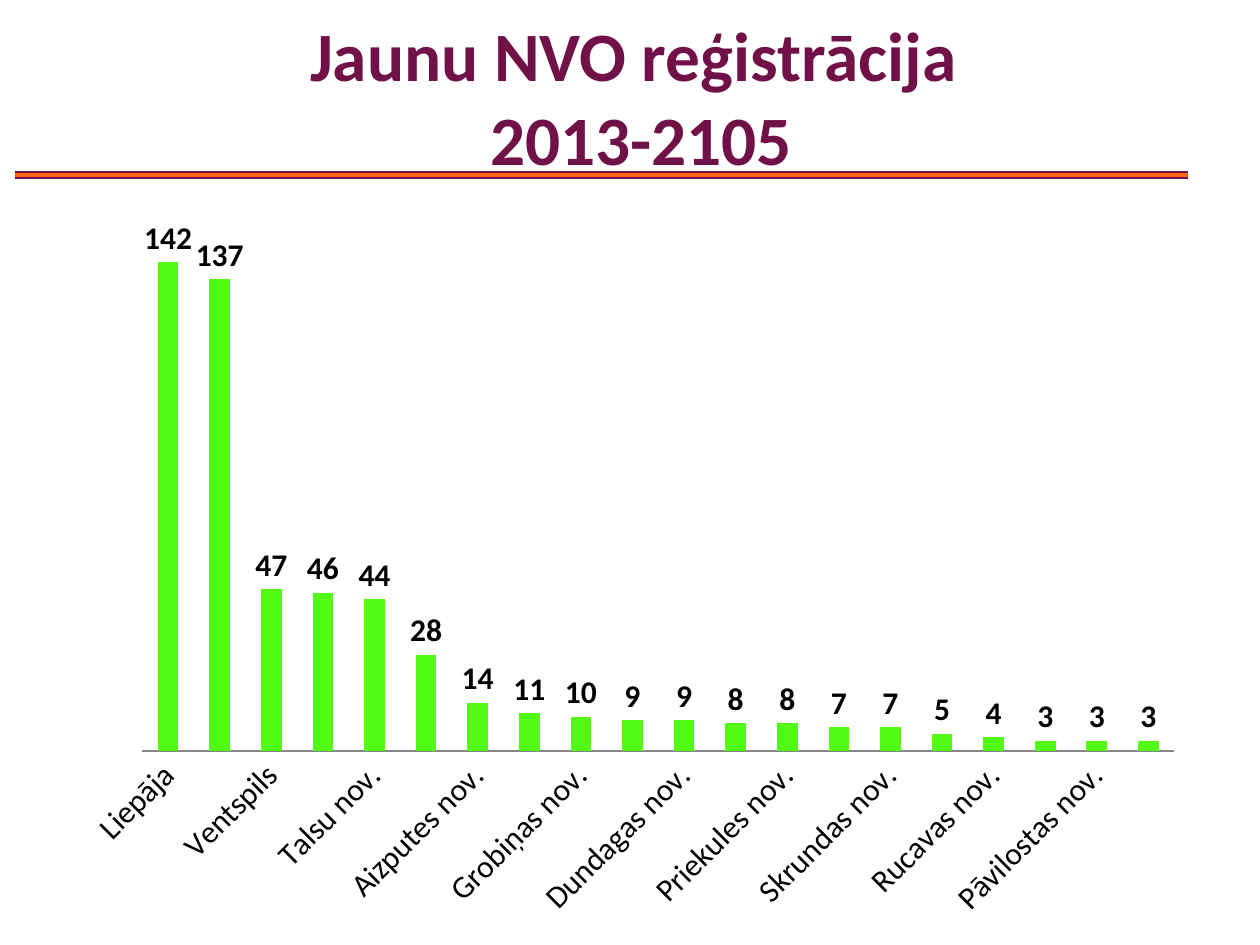
from lxml import etree
from pptx import Presentation
from pptx.chart.data import CategoryChartData
from pptx.dml.color import RGBColor
from pptx.enum.chart import XL_CHART_TYPE, XL_LABEL_POSITION, XL_TICK_MARK
from pptx.enum.shapes import MSO_CONNECTOR
from pptx.enum.text import MSO_ANCHOR, MSO_AUTO_SIZE, PP_ALIGN
from pptx.oxml import parse_xml
from pptx.oxml.ns import nsdecls, qn
from pptx.util import Inches, Pt

COLUMN = XL_CHART_TYPE.COLUMN_CLUSTERED
OUTSIDE = XL_LABEL_POSITION.OUTSIDE_END
NO_TICK = XL_TICK_MARK.NONE
STRAIGHT = MSO_CONNECTOR.STRAIGHT
MIDDLE = MSO_ANCHOR.MIDDLE
NO_FIT = MSO_AUTO_SIZE.NONE
CENTER = PP_ALIGN.CENTER
TITLE_ONLY = 5

PLUM, ORANGE, GREEN, GREY, BLACK = "701248", "FC6410", "52FA16", "868686", "000000"

REGISTRATIONS = {
    "Liepāja": 142, "Saldus nov.": 137, "Ventspils": 47, "Kuldīgas nov.": 46,
    "Talsu nov.": 44, "Ventspils nov.": 28, "Aizputes nov.": 14, "Rojas nov.": 11,
    "Grobiņas nov.": 10, "Brocēnu nov.": 9, "Dundagas nov.": 9, "Nīcas nov.": 8,
    "Priekules nov.": 8, "Alsungas nov.": 7, "Skrundas nov.": 7, "Durbes nov.": 5,
    "Rucavas nov.": 4, "Mērsraga nov.": 3, "Pāvilostas nov.": 3, "Vaiņodes nov.": 3,
}


def rgb(value):
    return RGBColor.from_string(value)


class Deck:
    """Holds the style and the current slide; lengths are percent of the slide size."""

    font = "Calibri"

    def __init__(self):
        self.prs = Presentation()
        self.prs.slide_width, self.prs.slide_height = Inches(10), Inches(7.5)
        self.slide = self.prs.slides.add_slide(self.prs.slide_layouts[TITLE_ONLY])

    def x(self, share):
        return round(self.prs.slide_width * share / 100)

    def y(self, share):
        return round(self.prs.slide_height * share / 100)

    def box(self, left, top, width, height):
        return self.x(left), self.y(top), self.x(width), self.y(height)

    def style(self, font, size, color, bold=False):
        font.name, font.size, font.bold = self.font, Pt(size), bold
        font.color.rgb = rgb(color)

    def title(self, lines, place):
        sp = self.slide.shapes.title
        sp.left, sp.top, sp.width, sp.height = self.box(*place)
        tf = sp.text_frame
        tf.auto_size, tf.vertical_anchor = NO_FIT, MIDDLE
        p = tf.paragraphs[0]
        p.alignment = CENTER
        for i, line in enumerate(lines):
            if i:
                p.add_line_break()
            r = p.add_run()
            r.text = line
            self.style(r.font, 39.6, PLUM, bold=True)

    def rule(self, left, right, top, color, width):
        line = self.slide.shapes.add_connector(
            STRAIGHT, self.x(left), self.y(top), self.x(right), self.y(top))
        line.line.color.rgb, line.line.width = rgb(color), Pt(width)
        etree.SubElement(line._element.spPr, qn("a:effectLst"))

    def column_chart(self, values, place, plot_area):
        data = CategoryChartData()
        data.categories = values.keys()
        data.add_series("Series 1", values.values())
        chart = self.slide.shapes.add_chart(COLUMN, *self.box(*place), data).chart
        chart.has_legend = chart.has_title = False
        self.style(chart.font, 18, BLACK)

        plot = chart.plots[0]
        plot.gap_width, plot.vary_by_categories = 150, False
        fill = plot.series[0].format.fill
        fill.solid()
        fill.fore_color.rgb = rgb(GREEN)
        plot.has_data_labels = True
        labels = plot.data_labels
        labels.show_value, labels.position = True, OUTSIDE
        self.style(labels.font, 18, BLACK, bold=True)

        scale = chart.value_axis
        scale.minimum_scale, scale.maximum_scale = 0, 160
        scale.has_major_gridlines = scale.visible = False

        axis = chart.category_axis
        axis.major_tick_mark = axis.minor_tick_mark = NO_TICK
        axis.format.line.color.rgb = rgb(GREY)
        self.style(axis.tick_labels.font, 18, BLACK)
        self.slant_labels(axis)
        self.place_plot(chart, plot_area)

    def slant_labels(self, axis):
        """Turn the labels by 45 degrees and show every second one."""
        element = axis._element
        element.find(qn("c:txPr")).find(qn("a:bodyPr")).set("rot", "-2700000")
        skip = parse_xml(f'<c:tickLblSkip {nsdecls("c")} val="2"/>')
        element.find(qn("c:noMultiLvlLbl")).addprevious(skip)

    def place_plot(self, chart, area):
        """Fix the inner plot area, given as shares of the chart."""
        parts = "".join(f'<c:{k} val="{v}"/>' for k, v in zip("xywh", area))
        layout = parse_xml(
            f'<c:layout {nsdecls("c")}><c:manualLayout><c:layoutTarget val="inner"/>'
            f'<c:xMode val="edge"/><c:yMode val="edge"/>{parts}'
            '</c:manualLayout></c:layout>')
        plot_area = chart._chartSpace.chart.plotArea
        for old in plot_area.findall(qn("c:layout")):
            plot_area.remove(old)
        plot_area.insert(0, layout)


def main():
    deck = Deck()
    for color, width in ((PLUM, 4.5), (ORANGE, 2.25)):
        deck.rule(1.2, 94.3, 18.53, color, width)
    deck.title(("Jaunu NVO reģistrācija ", "2013-2105"), (7.5, 1.73, 86.8, 16.8))
    deck.column_chart(REGISTRATIONS, (5, 19.6, 90, 78.8), (0.07, 0.02, 0.91, 0.74))
    deck.prs.save("out.pptx")


if __name__ == "__main__":
    main()
